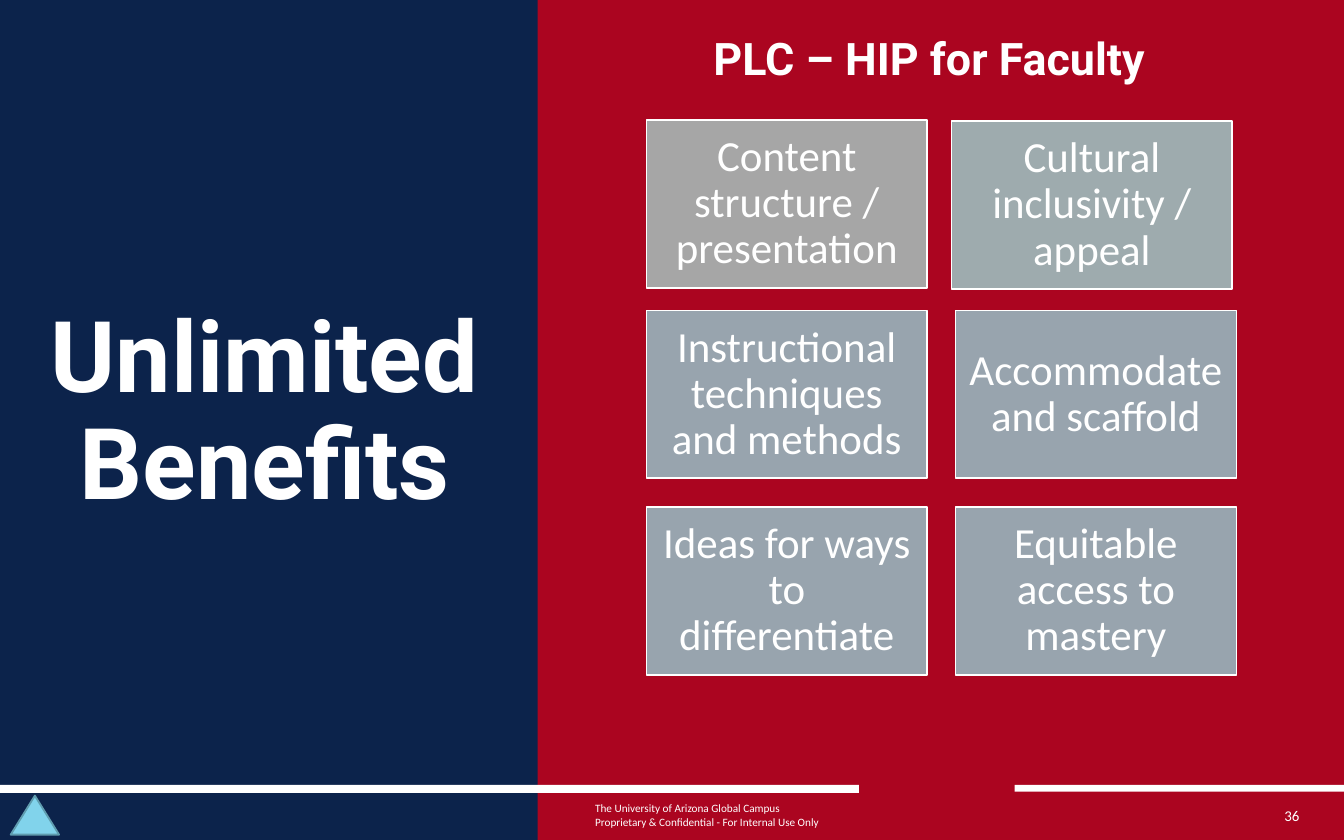
import pptx
import pptx.util
import pptx.dml.color
import pptx.enum.shapes
import pptx.enum.text

RGBColor = pptx.dml.color.RGBColor
SHAPE = pptx.enum.shapes.MSO_SHAPE
ALIGN = pptx.enum.text.PP_ALIGN

NAVY = RGBColor(0x0C, 0x23, 0x4B)
RED = RGBColor(0xAB, 0x05, 0x20)
WHITE = RGBColor(0xFF, 0xFF, 0xFF)
GREY = RGBColor(0xA6, 0xA6, 0xA6)
SAGE = RGBColor(0x9E, 0xAB, 0xAE)
SLATE = RGBColor(0x98, 0xA4, 0xAE)
SKY = RGBColor(0x81, 0xD3, 0xEB)
TEAL = RGBColor(0x5F, 0x9C, 0xAE)

COLS, ROWS = 100, 125
CARD_LEFTS = (48.1, 71.1)
CARD_TOPS = (17.8, 46.2, 75.4)
CARD_SIZE = (20.9, 25)
CARDS = [
    ("Content structure / presentation", GREY, 0, 0),
    ("Cultural inclusivity / appeal", SAGE, -0.3, 0.2),
    ("Instructional techniques and methods", SLATE, 0, 0),
    ("Accommodate and scaffold", SLATE, 0, 0),
    ("Ideas for ways to differentiate", SLATE, 0, 0),
    ("Equitable access to mastery", SLATE, 0, 0),
]


class Deck:
    heading = {"name": "Roboto", "bold": True}
    body = {"name": "Calibri", "bold": False}

    def __init__(self):
        self.prs = pptx.Presentation()
        self.prs.slide_width = pptx.util.Inches(10)
        self.prs.slide_height = pptx.util.Inches(6.25)
        self.s = self.prs.slides.add_slide(self.prs.slide_layouts[5])
        fill = self.s.background.fill
        fill.solid()
        fill.fore_color.rgb = NAVY

    def box(self, col, row, cols, rows):
        w, h = self.prs.slide_width / COLS, self.prs.slide_height / ROWS
        return [round(v) for v in (col * w, row * h, cols * w, rows * h)]

    def set_text(self, sp, text, size, style, align, insets=(0.1, 0.1, 0.1, 0.1), spacing=0.9):
        tf = sp.text_frame
        frame = {
            "word_wrap": True,
            "auto_size": pptx.enum.text.MSO_AUTO_SIZE.NONE,
            "vertical_anchor": pptx.enum.text.MSO_ANCHOR.MIDDLE,
        }
        sides = ("margin_left", "margin_top", "margin_right", "margin_bottom")
        frame.update(zip(sides, map(pptx.util.Inches, insets)))
        for key, value in frame.items():
            setattr(tf, key, value)
        tf.text = text
        p = tf.paragraphs[0]
        p.alignment, p.line_spacing = align, spacing
        for r in p.runs:
            for key, value in {**style, "size": pptx.util.Pt(size)}.items():
                setattr(r.font, key, value)
            r.font.color.rgb = WHITE

    def title(self, text, grid, size):
        sp = self.s.shapes.title
        for key, value in zip(("left", "top", "width", "height"), self.box(*grid)):
            setattr(sp, key, value)
        self.set_text(sp, text, size, self.heading, ALIGN.CENTER)

    def text(self, text, grid, size, style, align=ALIGN.LEFT, **kw):
        sp = self.s.shapes.add_textbox(*self.box(*grid))
        self.set_text(sp, text, size, style, align, **kw)

    def shape(self, grid, fill, line=None, kind=SHAPE.RECTANGLE):
        sp = self.s.shapes.add_shape(kind, *self.box(*grid))
        sp.shadow.inherit = False
        sp.fill.solid()
        sp.fill.fore_color.rgb = fill
        if line is None:
            sp.line.fill.background()
        else:
            sp.line.color.rgb = line
            sp.line.width = pptx.util.Pt(1)
        return sp

    def card(self, text, grid, fill):
        sp = self.shape(grid, fill, WHITE)
        self.set_text(sp, text, 23, self.body, ALIGN.CENTER)


def main():
    d = Deck()
    d.shape((40, 0, 60, ROWS), RED)
    d.shape((75.5, 116.8, 24.5, 1), WHITE)
    d.shape((0, 116.8, 63.9, 1.2), WHITE)
    d.title("Unlimited Benefits", (1.9, 22.8, 35.6, 77.6), 53)
    d.text("PLC – HIP for Faculty", (52.1, 3.2, 35.8, 11.8), 24, d.heading,
           insets=(0.1, 0.05, 0.1, 0.05))
    for i, (text, fill, dx, dy) in enumerate(CARDS):
        row, col = divmod(i, len(CARD_LEFTS))
        d.card(text, (CARD_LEFTS[col] + dx, CARD_TOPS[row] + dy, *CARD_SIZE), fill)
    d.text("The University of Arizona Global Campus\v"
           "Proprietary & Confidential - For Internal Use Only",
           (43.3, 118.8, 20.6, 5), 6, d.body, insets=(0.1, 0, 0, 0), spacing=1.0)
    d.text("36", (91.6, 118.8, 5.1, 5), 8, d.body, ALIGN.RIGHT,
           insets=(0, 0, 0, 0), spacing=1.0)
    d.shape((0.8, 118.4, 3.6, 5.8), SKY, TEAL, SHAPE.ISOSCELES_TRIANGLE)
    d.prs.save("out.pptx")


if __name__ == "__main__":
    main()
